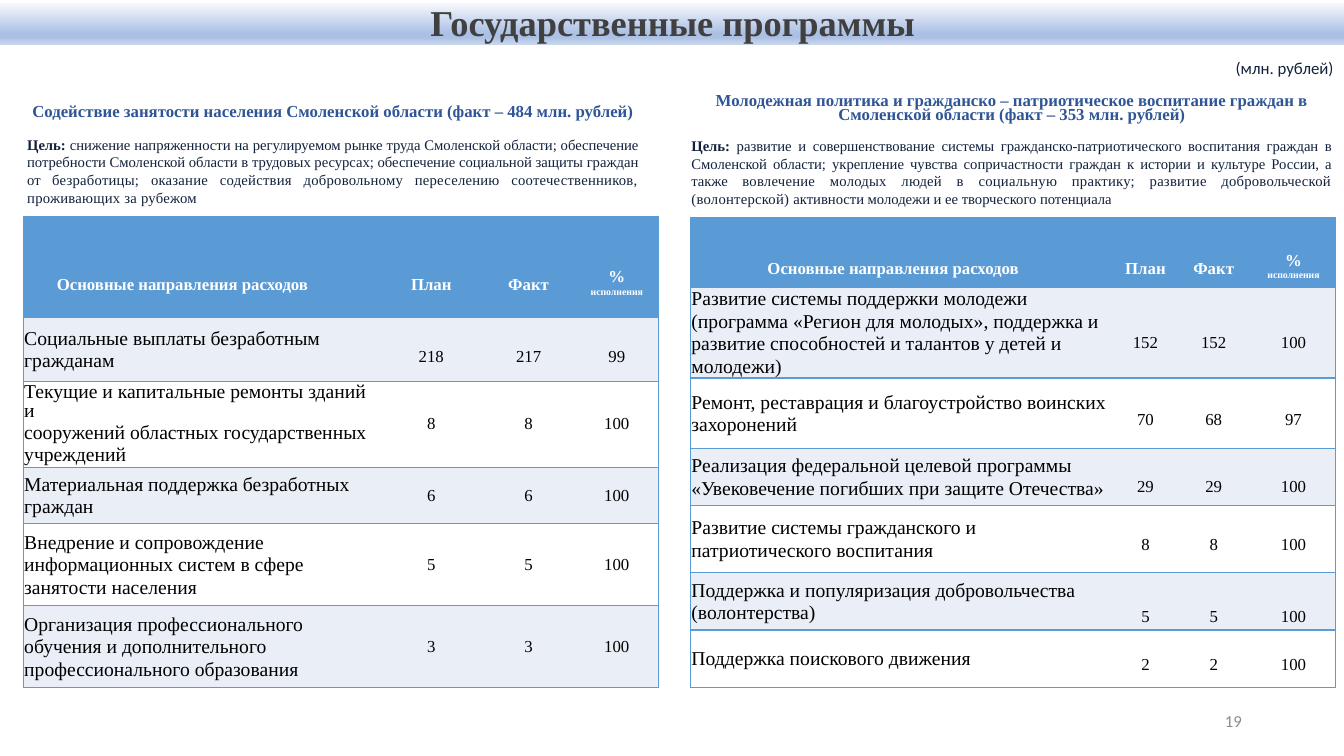
from lxml.etree import SubElement
from pptx import Presentation
from pptx.dml.color import RGBColor
from pptx.enum.shapes import MSO_SHAPE as Shape
from pptx.enum.text import MSO_ANCHOR as Anchor, PP_ALIGN as Align
from pptx.oxml.ns import qn
from pptx.util import Pt

SERIF, SANS = "Times New Roman", "Calibri"
BLUE, BAND, WHITE, BLACK = "5B9BD5", "EAEFF7", "FFFFFF", "000000"
HEADING, NAVY = "2F5597", "12213C"

TITLE = "Государственные программы"
TITLE_STOPS = [(0, "F6F8FC"), (74, "ABC0E4"), (83, "ABC0E4"), (100, "C7D5ED")]
UNIT = "(млн. рублей)"
PAGE_NUMBER = "19"
COLUMN_TITLES = ["Основные направления расходов", "План", "Факт", "%"]
PERCENT_NOTE = "исполнения"
GOAL = "Цель: "

# Goal parts: text, letter spacing.
# Rows: height, line pitch, space above numbers, name paragraphs, plan, fact, percent.
PROGRAMMES = [
    dict(
        heading="Содействие занятости населения Смоленской области (факт – 484 млн. рублей)",
        goal=[
            ("снижение напряженности на регулируемом рынке труда Смоленской области; "
             "обеспечение потребности Смоленской области в трудовых ресурсах; "
             "обеспечение социальной защиты граждан от ", 0),
            ("безработицы; оказание содействия добровольному переселению "
             "соотечественников, ", 0.2),
            ("проживающих за рубежом", 0.2)],
        text_box=(18.7, 64.8, 437.8, 80), text_top=7.2, pitch=None, goal_gap=10.4,
        table_at=(16.6, 154.8), columns=[255, 73, 66, 60],
        header=72, name_indent=24, header_top=26, percent_top=22,
        rows=[
            (45.5, 16.1, 10, ["Социальные выплаты безработным", "гражданам"], 218, 217, 99),
            (60.5, 13.9, 0, ["Текущие и капитальные ремонты зданий и",
                             "сооружений областных государственных учреждений"], 8, 8, 100),
            (40.5, 16.1, 0, ["Материальная поддержка безработных граждан"], 6, 6, 100),
            (58.5, 16.1, 0, ["Внедрение и сопровождение информационных систем в сфере "
                             "занятости населения"], 5, 5, 100),
            (58.5, 16.1, 0, ["Организация профессионального обучения и дополнительного "
                             "профессионального образования"], 3, 3, 100)]),
    dict(
        heading="Молодежная политика и гражданско – патриотическое воспитание граждан в "
                "Смоленской области (факт – 353 млн. рублей)",
        goal=[
            ("развитие и совершенствование системы гражданско-патриотического воспитания "
             "граждан в Смоленской области; укрепление чувства сопричастности граждан "
             "к истории и культуре России, а также ", 0),
            ("вовлечение молодых людей в социальную практику; развитие добровольческой "
             "(волонтерской) ", 0.2),
            ("активности молодежи и ее творческого потенциала", 0)],
        text_box=(493.2, 67, 458.6, 77.8), text_top=1.4, pitch=10.2, goal_gap=9,
        table_at=(493.2, 155.5), columns=[303, 44, 53.5, 60.5],
        header=49.5, name_indent=55, header_top=24, percent_top=20,
        rows=[
            (65, 16.1, 14.5, ["Развитие системы поддержки молодежи (программа «Регион для "
                              "молодых», поддержка и развитие способностей и талантов у "
                              "детей и молодежи)"], 152, 152, 100),
            (50.5, 16.1, 9, ["Ремонт, реставрация и благоустройство воинских захоронений"],
             70, 68, 97),
            (40.5, 16.1, 14.5, ["Реализация федеральной целевой программы «Увековечение "
                                "погибших при защите Отечества»"], 29, 29, 100),
            (48, 16.1, 9, ["Развитие системы гражданского и патриотического воспитания"],
             8, 8, 100),
            (41, 16.1, 23, ["Поддержка и популяризация добровольчества",
                            "(волонтерства)"], 5, 5, 100),
            (41, 16.1, 9, ["Поддержка поискового движения"], 2, 2, 100)]),
]


def rgb(value):
    return RGBColor.from_string(value)


def add_span(para, text, size, color, bold=False, face=SERIF, spacing=0):
    span = para.add_run()
    span.text = text
    span.font.size = Pt(size)
    span.font.name = face
    span.font.bold = bold
    span.font.color.rgb = rgb(color)
    if spacing:
        span.font._element.set("spc", str(round(spacing * 100)))


def next_para(frame, align=Align.LEFT, pitch=None):
    """Return the first paragraph while it is empty, or else a new one."""
    para = frame.paragraphs[0]
    if para.runs:
        para = frame.add_paragraph()
    para.alignment = align
    if pitch:
        para.line_spacing = Pt(pitch)
    return para


def set_margins(holder, left=0, top=0):
    """Set the insets of a text frame or a table cell."""
    holder.margin_left, holder.margin_top = Pt(left), Pt(top)
    holder.margin_right = holder.margin_bottom = 0


def add_box(page, place, wrap=True):
    frame = page.shapes.add_textbox(*map(Pt, place)).text_frame
    frame.word_wrap = wrap
    return frame


def add_title(page):
    bar = page.shapes.add_shape(Shape.RECTANGLE, 0, Pt(2.2), Pt(960), Pt(29.5))
    bar.shadow.inherit = False
    bar.line.fill.background()
    bar.fill.gradient()
    bar.fill.gradient_angle = 270
    stops = bar._element.spPr.find(".//" + qn("a:gsLst"))
    stops.clear()
    for position, color in TITLE_STOPS:
        stop = SubElement(stops, qn("a:gs"), pos=str(position * 1000))
        SubElement(stop, qn("a:srgbClr"), val=color)
    frame = bar.text_frame
    frame.vertical_anchor = Anchor.TOP
    set_margins(frame, 1.4, 1.4)
    para = next_para(frame, Align.CENTER)
    para.line_spacing = 0.9
    add_span(para, TITLE, 26, "404040", True)


def add_summary(page, programme):
    frame = add_box(page, programme["text_box"])
    set_margins(frame, 0.7, programme["text_top"])
    para = next_para(frame, Align.CENTER, programme["pitch"])
    add_span(para, programme["heading"], 12, HEADING, True)
    para = next_para(frame, Align.JUSTIFY)
    para.space_before = Pt(programme["goal_gap"])
    add_span(para, GOAL, 10.5, NAVY, True)
    for text, spacing in programme["goal"]:
        add_span(para, text, 10.5, NAVY, spacing=spacing)


def style_cell(cell, fill, sides):
    """Fill the cell and draw a line only on the given sides."""
    cell.vertical_anchor = Anchor.MIDDLE
    properties = cell._tc.get_or_add_tcPr()
    for side in "LRTB":
        line = SubElement(properties, qn("a:ln" + side), w="12700")
        if side in sides:
            solid = SubElement(line, qn("a:solidFill"))
            SubElement(solid, qn("a:srgbClr"), val=BLUE)
        else:
            SubElement(line, qn("a:noFill"))
    cell.fill.solid()
    cell.fill.fore_color.rgb = rgb(fill)


def add_spending(page, programme):
    columns, rows = programme["columns"], programme["rows"]
    heights = [programme["header"]] + [row[0] for row in rows]
    place = (*programme["table_at"], sum(columns), sum(heights))
    table = page.shapes.add_table(len(heights), len(columns), *map(Pt, place)).table
    table.first_row = table.horz_banding = False
    for column, width in zip(table.columns, columns):
        column.width = Pt(width)
    for index, height in enumerate(heights):
        table.rows[index].height = Pt(height)
        fill = BLUE if index == 0 else BAND if index % 2 else WHITE
        for cell, edge in zip(table.rows[index].cells, ["L", "", "", "R"]):
            style_cell(cell, fill, "TB" + edge)

    for number, text in enumerate(COLUMN_TITLES):
        cell = table.cell(0, number)
        top = programme["percent_top" if text == "%" else "header_top"]
        set_margins(cell, 0 if number else programme["name_indent"], top)
        align = Align.CENTER if number else Align.LEFT
        add_span(next_para(cell.text_frame, align), text, 12, WHITE, True)
    add_span(next_para(cell.text_frame, Align.CENTER), PERCENT_NOTE, 7, WHITE, True)

    for index, (_, pitch, top, names, *values) in enumerate(rows, 1):
        cell = table.cell(index, 0)
        set_margins(cell, 0.7)
        for order, name in enumerate(names):
            para = next_para(cell.text_frame, pitch=None if order else pitch)
            add_span(para, name, 14, BLACK)
        for number, value in enumerate(values, 1):
            cell = table.cell(index, number)
            set_margins(cell, top=top)
            add_span(next_para(cell.text_frame, Align.CENTER), str(value), 12, BLACK)


def main():
    deck = Presentation()
    deck.slide_width, deck.slide_height = Pt(960), Pt(540)
    page = deck.slides.add_slide(deck.slide_layouts[6])
    add_title(page)
    for programme in PROGRAMMES:
        add_summary(page, programme)
        add_spending(page, programme)
    unit = add_box(page, (873.4, 37.4, 86.4, 21.6), wrap=False)
    add_span(next_para(unit, Align.RIGHT), UNIT, 12, "13223D", face=SANS)
    footer = add_box(page, (678.2, 500.4, 216, 28.8))
    footer.vertical_anchor = Anchor.MIDDLE
    add_span(next_para(footer, Align.RIGHT), PAGE_NUMBER, 12, "8C8C8C", face=SANS)
    deck.save("out.pptx")


if __name__ == "__main__":
    main()
